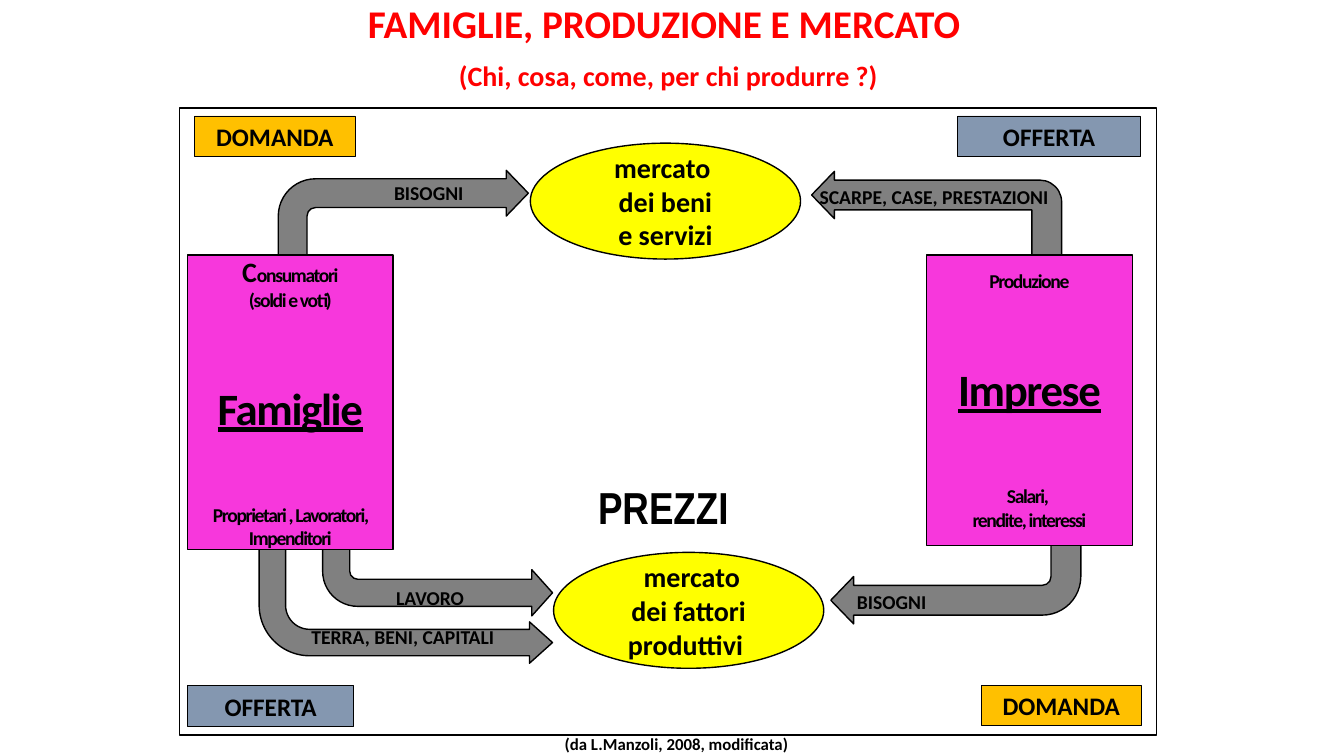
from pptx import Presentation
from pptx.dml.color import RGBColor
from pptx.enum.shapes import MSO_SHAPE
from pptx.enum.text import MSO_ANCHOR, MSO_AUTO_SIZE, PP_ALIGN
from pptx.util import Inches, Pt

BLACK, WHITE, RED = "000000", "FFFFFF", "FF0000"
GRAY, PINK, YELLOW = "808080", "F737DC", "FFFF00"
GOLD, STEEL = "FFC000", "8497B0"


def color(code):
    """Turn a hex string into a colour."""
    return RGBColor.from_string(code)


class Board:
    """Hold the style and the current slide."""

    def __init__(self, slide, font="Calibri"):
        """Keep the slide and its base font."""
        self.slide, self.font = slide, font

    def style(self, run, size, ink=BLACK, font=None):
        """Format one bold run."""
        run.font.name = font or self.font
        run.font.size = Pt(size)
        run.font.bold = True
        run.font.color.rgb = color(ink)

    def letter(self, frame, text, size, ink=BLACK, align=PP_ALIGN.CENTER, font=None):
        """Fill a text frame with evenly styled lines."""
        frame.text = text
        frame.word_wrap = True
        frame.auto_size = MSO_AUTO_SIZE.NONE
        frame.vertical_anchor = MSO_ANCHOR.MIDDLE
        for line in frame.paragraphs:
            line.alignment = align
            for run in line.runs:
                self.style(run, size, ink, font)

    def title(self, box, head, sub):
        """Place the heading and its subtitle."""
        shape = self.slide.shapes.title
        shape.left, shape.top, shape.width, shape.height = map(Inches, box)
        self.letter(shape.text_frame, f"{head}\n ", 28, RED)
        run = shape.text_frame.paragraphs[1].add_run()
        run.text = sub
        self.style(run, 20, RED)

    def shape(self, kind, box, fill, width=1):
        """Draw a filled preset shape with a black outline."""
        shape = self.slide.shapes.add_shape(kind, *map(Inches, box))
        shape.shadow.inherit = False
        shape.fill.solid()
        shape.fill.fore_color.rgb = color(fill)
        shape.line.color.rgb = color(BLACK)
        shape.line.width = Pt(width)
        return shape

    def arrow(self, box, bends, flips=()):
        """Draw a bent arrow, mirrored on the named axes."""
        shape = self.shape(MSO_SHAPE.BENT_ARROW, box, GRAY)
        for i, bend in enumerate(bends):
            shape.adjustments[i] = bend
        for flip in flips:
            shape._element.spPr.xfrm.set(flip, "1")

    def tag(self, box, text, fill):
        """Draw a small captioned box."""
        self.letter(self.shape(MSO_SHAPE.RECTANGLE, box, fill, 0.5).text_frame, text, 18)

    def market(self, left, top, text):
        """Draw a market oval."""
        box = left, top, 2.68, 1.15
        self.letter(self.shape(MSO_SHAPE.FLOWCHART_CONNECTOR, box, YELLOW).text_frame, text, 20)

    def actor(self, box, above, name, below):
        """Draw an actor box with its name between two roles."""
        frame = self.shape(MSO_SHAPE.RECTANGLE, box, PINK).text_frame
        self.letter(frame, f"{above}\n{name}\n{below}", 14)
        frame.margin_top = frame.margin_bottom = 0
        spot = above.count("\n") + 1
        for line in frame.paragraphs[spot:spot + 2]:
            line.space_before = Pt(49)
        for line in frame.paragraphs:
            for run in line.runs:
                run.font._element.set("spc", "-100")
        run = frame.paragraphs[spot].runs[0]
        run.font.size = Pt(32)
        run.font.underline = True
        return frame

    def initial(self, line, size):
        """Enlarge the first letter of a line."""
        first = line.runs[0]
        rest = line.add_run()
        rest.text, first.text = first.text[1:], first.text[0]
        self.style(rest, 14)
        rest.font._element.set("spc", "-100")
        first.font.size = Pt(size)

    def label(self, box, text, size=14, align=PP_ALIGN.LEFT, font=None):
        """Place free text."""
        frame = self.slide.shapes.add_textbox(*map(Inches, box)).text_frame
        self.letter(frame, text, size, align=align, font=font)


def main():
    """Build the market diagram."""
    deck = Presentation()
    deck.slide_width, deck.slide_height = Inches(13.33), Inches(7.5)
    board = Board(deck.slides.add_slide(deck.slide_layouts[5]))
    board.title((1.94, -0.19, 9.29, 1.31), "FAMIGLIE, PRODUZIONE E MERCATO",
                "(Chi, cosa, come, per chi produrre ?)")
    board.shape(MSO_SHAPE.RECTANGLE, (1.78, 1.07, 9.69, 6.22), WHITE)

    bend = 0.34, 0.27, 0.26, 0.44
    board.arrow((2.57, 5.44, 2.91, 1.14), (0.23, 0.18, 0.2, 0.44), ["flipV"])
    board.arrow((3.2, 5.32, 2.28, 0.79), (0.34, 0.29, 0.26, 0.44), ["flipV"])
    board.arrow((8.05, 1.7, 2.48, 0.87), (0.34, 0.27, 0.26, 0.25), ["flipH"])
    board.arrow((8.24, 5.32, 2.48, 0.87), bend, ["flipH", "flipV"])
    board.arrow((2.76, 1.69, 2.48, 0.84), bend)

    board.market(5.26, 1.42, "mercato \ndei beni\ne servizi")
    board.market(5.49, 5.48, " mercato\ndei fattori\nproduttivi ")

    homes = board.actor((1.86, 2.53, 2.04, 2.92), "Consumatori\n(soldi e voti)",
                        "Famiglie", "Proprietari , Lavoratori, Impenditori")
    board.initial(homes.paragraphs[0], 20)
    board.actor((9.19, 2.53, 2.04, 2.88), "Produzione", "Imprese",
                "Salari, \nrendite, interessi")

    board.tag((1.93, 1.15, 1.59, 0.4), "DOMANDA", GOLD)
    board.tag((9.5, 1.15, 1.81, 0.4), "OFFERTA", STEEL)
    board.tag((1.86, 6.8, 1.65, 0.41), "OFFERTA", STEEL)
    board.tag((9.73, 6.8, 1.59, 0.4), "DOMANDA", GOLD)

    for left, top, width, text in [
        (3.81, 1.74, 1.44, "BISOGNI"),
        (8.03, 1.78, 2.57, "SCARPE, CASE, PRESTAZIONI"),
        (3.83, 5.76, 0.91, "LAVORO"),
        (2.99, 6.15, 2.04, "TERRA, BENI, CAPITALI"),
        (8.4, 5.8, 0.91, "BISOGNI"),
    ]:
        board.label((left, top, width, 0.34), text)
    board.label((5.58, 4.68, 2, 0.7), "PREZZI", 32, PP_ALIGN.CENTER, "Arial Narrow")
    board.label((5.41, 7.23, 2.6, 0.3), "(da L.Manzoli, 2008, modificata)",
                12, PP_ALIGN.CENTER)
    deck.save("out.pptx")


if __name__ == "__main__":
    main()
